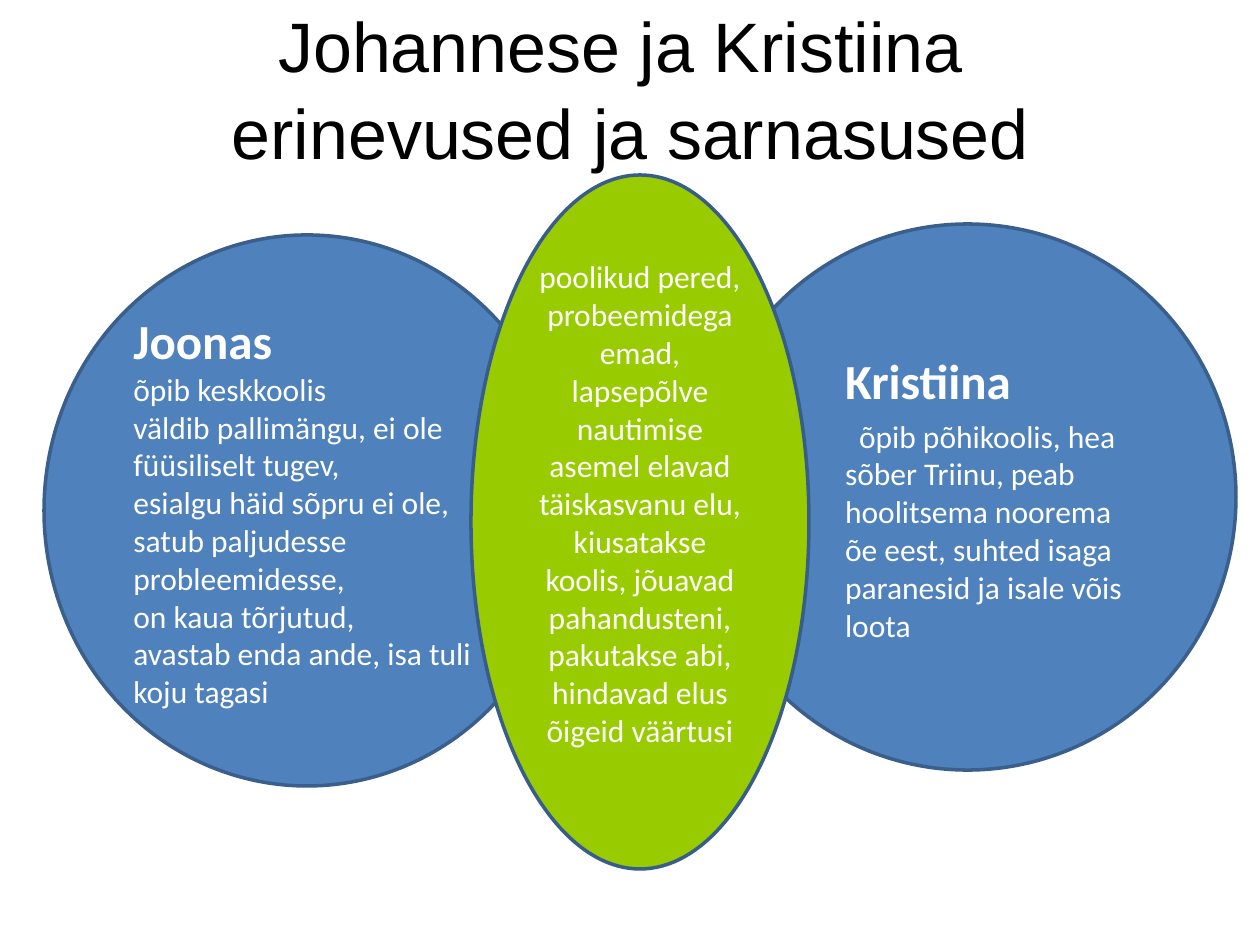
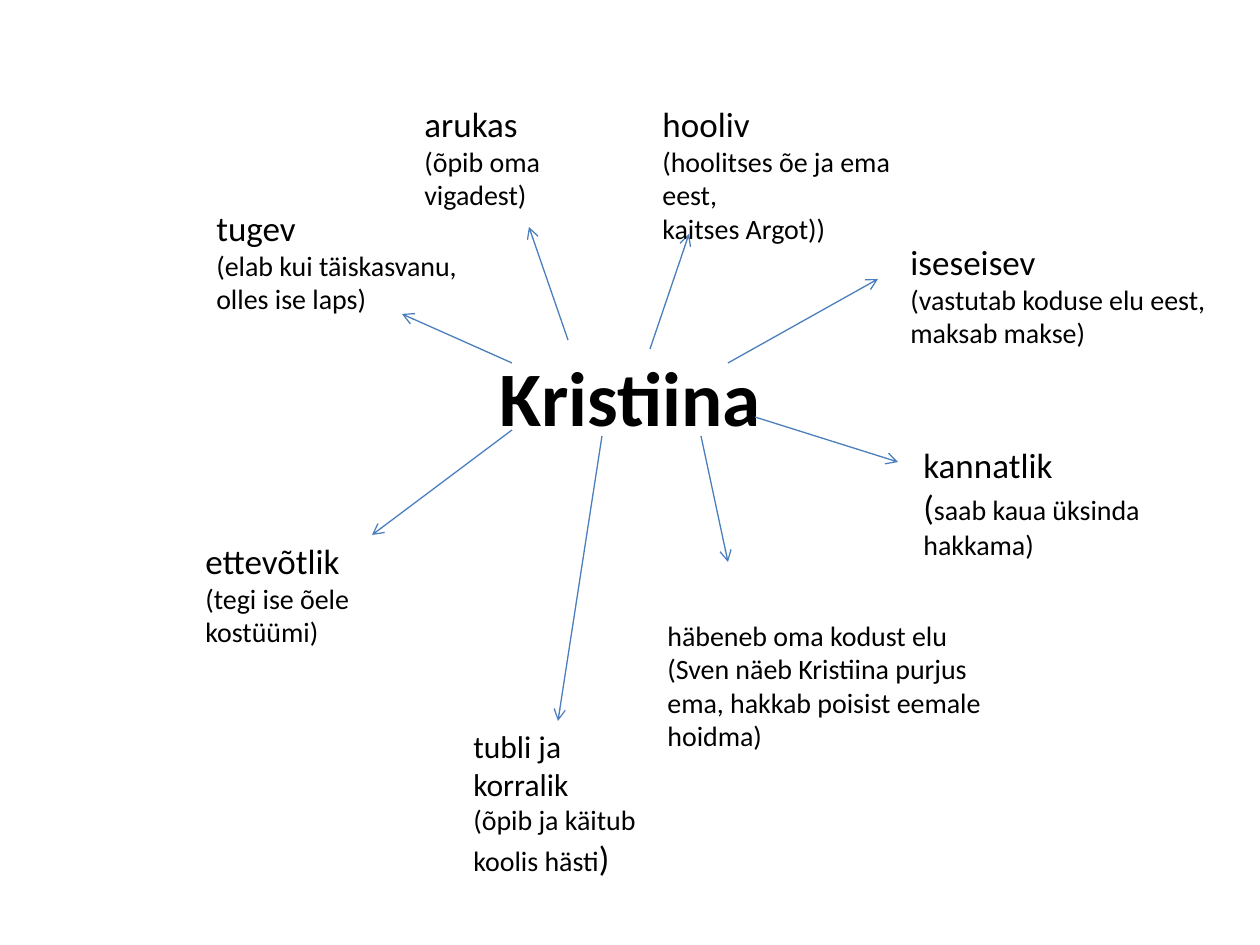
from lxml import etree
from pptx import Presentation
from pptx.dml.color import RGBColor
from pptx.enum.shapes import MSO_CONNECTOR as Connector, MSO_SHAPE as Shape
from pptx.enum.text import MSO_ANCHOR as Anchor, MSO_AUTO_SIZE as AutoSize, PP_ALIGN as Align
from pptx.oxml.ns import qn
from pptx.util import Pt

# Shared measures and colours
PX_PER_INCH = 126
SLIDE_WIDTH, SLIDE_HEIGHT = 1260, 945
TITLE_ONLY = 5
BLACK, WHITE = "000000", "FFFFFF"
BLUE, GREEN = "4F81BD", "99CC00"
BLUE_EDGE, GREEN_EDGE, ARROW = "3A5F8C", "385D8A", "4B7EBC"
BODY_FONT, TITLE_FONT = "Calibri", "Arial"
NAME, BODY, TRAIT, SMALL = 28, 18, 20, 16

# Circles: box, fill, edge, paragraph format, paragraphs (text, size, bold)
CIRCLES = [
    ((44, 235, 526, 551), BLUE, BLUE_EDGE, {"alignment": Align.LEFT}, [
        ("Joonas", NAME, True),
        ("õpib keskkoolis", BODY, False),
        ("väldib pallimängu, ei ole füüsiliselt tugev,", BODY, False),
        ("esialgu häid sõpru ei ole,", BODY, False),
        ("satub paljudesse probleemidesse,", BODY, False),
        ("on kaua tõrjutud,", BODY, False),
        ("avastab enda ande, isa tuli koju tagasi", BODY, False)]),
    ((699, 224, 537, 546), BLUE, BLUE_EDGE,
     {"alignment": Align.LEFT, "space_before": Pt(4)}, [
        ("Kristiina", NAME, True),
        ("õpib põhikoolis, hea sõber Triinu, peab hoolitsema noorema õe eest, "
         "suhted isaga paranesid ja isale võis loota", BODY, False)]),
    ((471, 175, 338, 694), GREEN, GREEN_EDGE, {"alignment": Align.CENTER}, [
        ("poolikud pered,", BODY, False),
        ("probeemidega emad, lapsepõlve nautimise asemel elavad täiskasvanu elu, "
         "kiusatakse koolis, jõuavad pahandusteni, pakutakse abi, "
         "hindavad elus õigeid väärtusi", BODY, False)]),
]

# Traits: box, arrow start, arrow end, paragraphs made of (text, size) runs
TRAITS = [
    ((911, 437, 254, 131), (755, 417), (898, 462),
     [[("kannatlik", TRAIT)], [("(", TRAIT), ("saab kaua üksinda hakkama)", SMALL)]]),
    ((655, 612, 382, 148), (701, 436), (728, 562),
     [[("häbeneb oma kodust elu", SMALL)],
      [("(Sven näeb Kristiina purjus ema, hakkab poisist eemale hoidma)", SMALL)]]),
    ((461, 721, 193, 165), (602, 436), (558, 721),
     [[("tubli ja korralik", BODY)],
      [("(õpib ja käitub koolis hästi", SMALL), (")", TRAIT)]]),
    ((193, 533, 286, 123), (512, 430), (372, 535),
     [[("ettevõtlik", TRAIT)], [("(tegi ise õele kostüümi)", SMALL)]]),
    ((204, 200, 275, 123), (512, 363), (402, 314),
     [[("tugev", TRAIT)], [("(elab kui täiskasvanu,", SMALL)], [("olles ise laps)", SMALL)]]),
    ((412, 96, 243, 123), (568, 340), (529, 227),
     [[("arukas", TRAIT)], [("(õpib oma vigadest)", SMALL)]]),
    ((650, 96, 297, 156), (650, 349), (689, 234),
     [[("hooliv", TRAIT)], [("(hoolitses õe ja ema eest,", SMALL)],
      [("kaitses Argot))", SMALL)]]),
    ((898, 234, 324, 123), (728, 363), (878, 279),
     [[("iseseisev", TRAIT)], [("(vastutab koduse elu eest,", SMALL)],
      [("maksab makse)", SMALL)]]),
]


def px(*lengths):
    return [round(length * 914400 / PX_PER_INCH) for length in lengths]


def color(value):
    return RGBColor.from_string(value)


def set_values(target, values):
    for name, value in values.items():
        setattr(target, name, value)


def format_font(font, size, text_color, bold=False, name=BODY_FONT):
    set_values(font, {"name": name, "size": Pt(size), "bold": bold})
    font.color.rgb = color(text_color)


def write(frame, paragraphs, text_color, paragraph_format, anchor):
    """Each paragraph is a list of (text, size) or (text, size, bold) runs."""
    set_values(frame, {"word_wrap": True, "auto_size": AutoSize.NONE,
                       "vertical_anchor": anchor})
    for index, runs in enumerate(paragraphs):
        paragraph = frame.paragraphs[0] if index == 0 else frame.add_paragraph()
        set_values(paragraph, paragraph_format)
        for text, size, *bold in runs:
            run = paragraph.add_run()
            run.text = text
            format_font(run.font, size, text_color, *bold)


def add_title(slide, box, text, size, bold, font):
    title = slide.shapes.title
    set_values(title, dict(zip(("left", "top", "width", "height"), px(*box))))
    frame = title.text_frame
    frame.text = text
    set_values(frame, {"word_wrap": True, "auto_size": AutoSize.NONE,
                       "vertical_anchor": Anchor.MIDDLE})
    paragraph = frame.paragraphs[0]
    paragraph.alignment = Align.CENTER
    for run in paragraph.runs:
        format_font(run.font, size, BLACK, bold, font)


def add_circle(slide, box, fill, edge, paragraph_format, paragraphs):
    circle = slide.shapes.add_shape(Shape.OVAL, *px(*box))
    circle.shadow.inherit = False
    circle.fill.solid()
    circle.fill.fore_color.rgb = color(fill)
    circle.line.color.rgb = color(edge)
    circle.line.width = Pt(2)
    write(circle.text_frame, [[run] for run in paragraphs], WHITE,
          paragraph_format, Anchor.MIDDLE)
    return circle


def indent(paragraph, margin, first_line=0):
    properties = paragraph._p.get_or_add_pPr()
    for name, length in zip(("marL", "indent"), px(margin, first_line)):
        properties.set(name, str(length))


def add_arrow(slide, start, end):
    arrow = slide.shapes.add_connector(Connector.STRAIGHT, *px(*start, *end))
    arrow.line.color.rgb = color(ARROW)
    arrow.line.width = Pt(0.75)
    etree.SubElement(arrow.line._get_or_add_ln(), qn("a:tailEnd"), type="arrow")
    etree.SubElement(arrow._element.spPr, qn("a:effectLst"))


def add_label(slide, box, paragraphs):
    label = slide.shapes.add_textbox(*px(*box))
    write(label.text_frame, paragraphs, BLACK, {"alignment": Align.LEFT}, Anchor.TOP)


def add_slide(presentation):
    return presentation.slides.add_slide(presentation.slide_layouts[TITLE_ONLY])


def build_comparison(presentation):
    slide = add_slide(presentation)
    add_title(slide, (63, 38, 1134, 97),
              "Johannese ja Kristiina \verinevused ja sarnasused", 40, False, TITLE_FONT)
    slide.shapes.title.text_frame.paragraphs[0].line_spacing = 1.04
    _, kristiina, shared = [add_circle(slide, *circle) for circle in CIRCLES]
    # Kristiina's text is set in, and the shared text sits above the middle
    heading, description = kristiina.text_frame.paragraphs
    indent(heading, 55)
    indent(description, 55, 14)
    shared.text_frame.margin_bottom = px(44)[0]


def build_traits(presentation):
    slide = add_slide(presentation)
    add_title(slide, (95, 294, 1071, 203), "Kristiina", 44, True, BODY_FONT)
    for box, start, end, paragraphs in TRAITS:
        add_arrow(slide, start, end)
        add_label(slide, box, paragraphs)


def main():
    presentation = Presentation()
    presentation.slide_width, presentation.slide_height = px(SLIDE_WIDTH, SLIDE_HEIGHT)
    build_comparison(presentation)
    build_traits(presentation)
    presentation.save("out.pptx")


if __name__ == "__main__":
    main()
